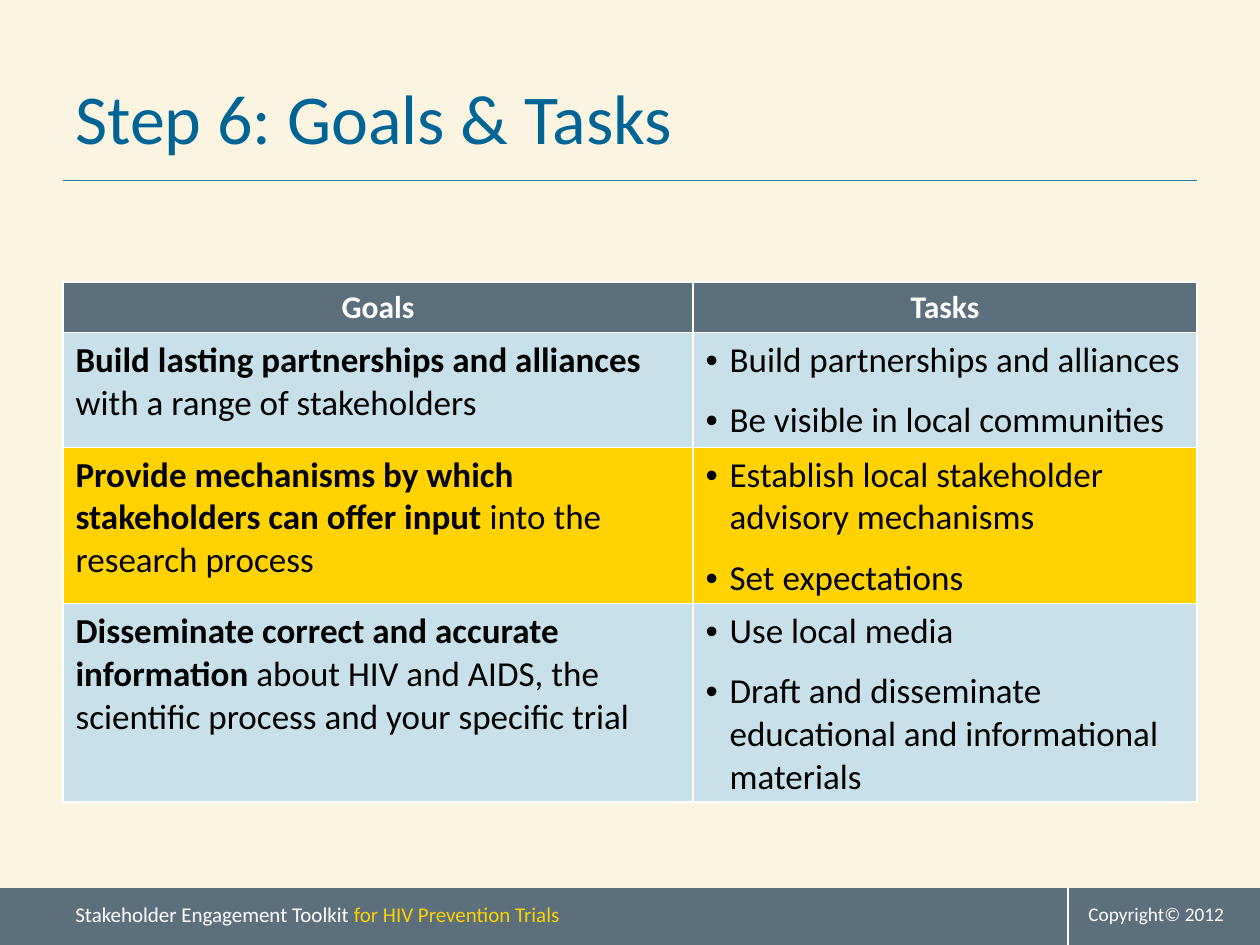
from lxml import etree
from pptx import Presentation, util as u
from pptx.dml.color import RGBColor
from pptx.enum import shapes, text
from pptx.oxml import ns

PX = 914400 / 126
PAPER = RGBColor(0xFA, 0xF8, 0xFA)
YELLOW = RGBColor(0xFF, 0xD2, 0x00)
SLATE = RGBColor(0x5C, 0x6F, 0x7C)
TEAL = RGBColor(0x2C, 0x7C, 0x9F)
BLUE = RGBColor(0x00, 0x65, 0x95)
PALE_BLUE = RGBColor(0xC8, 0xE0, 0xE9)
WHITE = RGBColor(0xFF, 0xFF, 0xFF)
BLACK = RGBColor(0x00, 0x00, 0x00)


def px(*lengths):
    return [u.Emu(round(length * PX)) for length in lengths]


def add_runs(paragraph, size, *runs):
    for words, color, bold in runs:
        run = paragraph.add_run()
        run.text = words
        run.font.color.rgb = color
        font_format = {"name": "Calibri", "size": u.Pt(size), "bold": bold}
        for key, value in font_format.items():
            setattr(run.font, key, value)


deck = Presentation()
deck.slide_width, deck.slide_height = px(1260, 945)
slide = deck.slides.add_slide(deck.slide_layouts[6])
slide.background.fill.solid()
slide.background.fill.fore_color.rgb = PAPER

# Yellow tint over the page, and the footer band
bands = []
for box, color in [((0, 0, 1260, 945), YELLOW), ((0, 888, 1260, 57), SLATE)]:
    band = slide.shapes.add_shape(shapes.MSO_SHAPE.RECTANGLE, *px(*box))
    band.shadow.inherit = False
    band.fill.solid()
    band.fill.fore_color.rgb = color
    band.line.fill.background()
    bands.append(band)
tint_color = bands[0].fill._xPr.find(".//" + ns.qn("a:srgbClr"))
etree.SubElement(tint_color, ns.qn("a:alpha"), val="10000")

# Title rule and footer divider
for ends, color, width in [
    ((63, 180, 1197, 180), TEAL, 0.25),
    ((1068, 888, 1068, 945), WHITE, 0.75),
]:
    rule = slide.shapes.add_connector(shapes.MSO_CONNECTOR.STRAIGHT, *px(*ends))
    rule.line.color.rgb = color
    rule.line.width = u.Pt(width)
    etree.SubElement(rule._element.spPr, ns.qn("a:effectLst"))

# Title and footer texts
for box, anchor, size, runs in [
    ((63, 38, 1134, 157), text.MSO_ANCHOR.MIDDLE, 40,
     [("Step 6: Goals & Tasks", BLUE, False)]),
    ((63, 895, 998, 38), text.MSO_ANCHOR.TOP, 12,
     [("Stakeholder Engagement Toolkit ", WHITE, False),
      ("for HIV Prevention Trials", YELLOW, False)]),
    ((1076, 896, 180, 35), text.MSO_ANCHOR.TOP, 11,
     [("Copyright© 2012", WHITE, False)]),
]:
    frame = slide.shapes.add_textbox(*px(*box)).text_frame
    frame.word_wrap = True
    frame.vertical_anchor = anchor
    add_runs(frame.paragraphs[0], size, *runs)

# Goals and tasks table
goals_and_tasks = [
    ("Build lasting partnerships and alliances ", "with a range of stakeholders",
     ["Build partnerships and alliances", "Be visible in local communities"], PALE_BLUE),
    ("Provide mechanisms by which stakeholders can offer input ",
     "into the research process",
     ["Establish local stakeholder advisory mechanisms", "Set expectations"], YELLOW),
    ("Disseminate correct and accurate information ",
     "about HIV and AIDS, the scientific process and your specific trial",
     ["Use local media",
      "Draft and disseminate educational and informational materials"], PALE_BLUE),
]
table = slide.shapes.add_table(4, 2, *px(63, 282, 1134, 519)).table
for column, width in zip(table.columns, px(630, 504)):
    column.width = width
for row, height in zip(table.rows, px(50, 115, 156, 198)):
    row.height = height

row_colors = [SLATE] + [entry[-1] for entry in goals_and_tasks]
for row, color in zip(table.rows, row_colors):
    for cell in row.cells:
        cell.fill.solid()
        cell.fill.fore_color.rgb = color

for column, heading in enumerate(["Goals", "Tasks"]):
    paragraph = table.cell(0, column).text_frame.paragraphs[0]
    paragraph.alignment = text.PP_ALIGN.CENTER
    add_runs(paragraph, 18, (heading, WHITE, True))

for row, (goal, detail, tasks, _) in enumerate(goals_and_tasks, 1):
    paragraph = table.cell(row, 0).text_frame.paragraphs[0]
    paragraph.space_before = u.Pt(10)
    add_runs(paragraph, 20, (goal, BLACK, True), (detail, BLACK, False))

    frame = table.cell(row, 1).text_frame
    for index, task in enumerate(tasks):
        paragraph = frame.add_paragraph() if index else frame.paragraphs[0]
        paragraph.space_before = u.Pt(10)
        add_runs(paragraph, 20, (task, BLACK, False))
        bullet_format = paragraph._p.get_or_add_pPr()
        indent = px(24)[0]
        bullet_format.set("marL", str(indent))
        bullet_format.set("indent", str(-indent))
        etree.SubElement(bullet_format, ns.qn("a:buFont"), typeface="Arial")
        etree.SubElement(bullet_format, ns.qn("a:buChar"), char="•")

deck.save("out.pptx")
